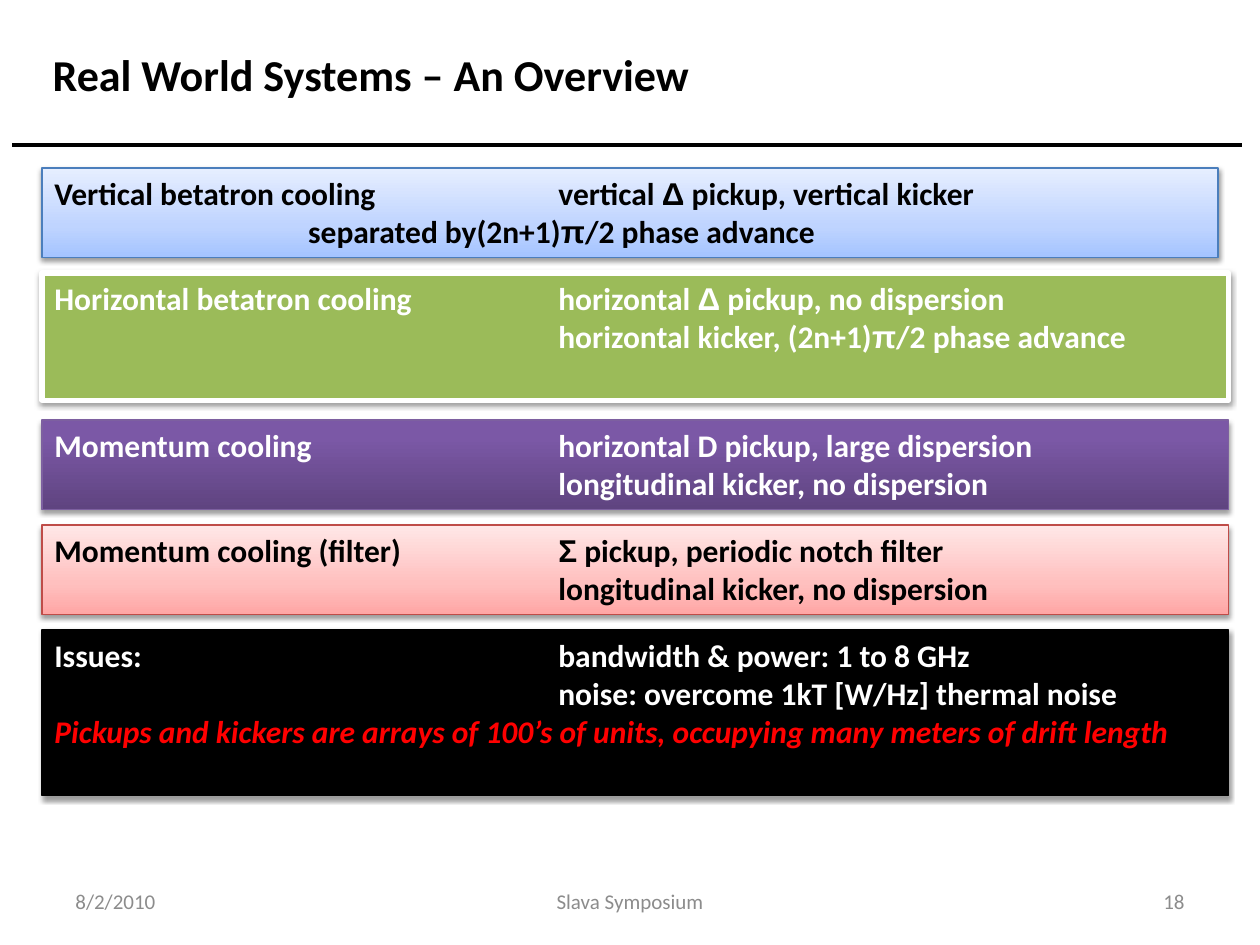
from itertools import groupby

from lxml import etree
from pptx import Presentation
from pptx.dml.color import RGBColor
from pptx.enum.shapes import MSO_CONNECTOR, MSO_SHAPE
from pptx.enum.text import MSO_ANCHOR, PP_ALIGN
from pptx.oxml.ns import qn
from pptx.util import Pt

RECT, STRAIGHT = MSO_SHAPE.RECTANGLE, MSO_CONNECTOR.STRAIGHT
TOP, MIDDLE = MSO_ANCHOR.TOP, MSO_ANCHOR.MIDDLE
LEFT, CENTER, RIGHT = PP_ALIGN.LEFT, PP_ALIGN.CENTER, PP_ALIGN.RIGHT
COLUMN = 288  # offset of the description column
SYMBOLS = "ΔπΣ"


def rgb(value):
    return RGBColor.from_string(value)


def add_text(p, text, size, color, **font):
    """Add text in Calibri, with the Greek symbols in Arial."""
    for is_symbol, chars in groupby(text, lambda c: c in SYMBOLS):
        r = p.add_run()
        r.text = "".join(chars)
        r.font.name = "Arial" if is_symbol else "Calibri"
        r.font.size = Pt(size)
        r.font.color.rgb = rgb(color)
        for name, value in font.items():
            setattr(r.font, name, value)


prs = Presentation()
prs.slide_width, prs.slide_height = Pt(720), Pt(540)
slide = prs.slides.add_slide(prs.slide_layouts[6])

# Title, date, footer and slide number
labels = [
    ("Real World Systems – An Overview", 23, 22, 674, 40, 25.2, "000000", LEFT, True),
    ("8/2/2010", 36, 500.5, 168, 28.75, 12, "8C8C8C", LEFT, False),
    ("18", 516, 500.5, 168, 28.75, 12, "8C8C8C", RIGHT, False),
    ("Slava Symposium", 246, 500.5, 228, 28.75, 12, "8C8C8C", CENTER, False),
]
for text, x, y, w, h, size, color, align, bold in labels:
    tf = slide.shapes.add_textbox(Pt(x), Pt(y), Pt(w), Pt(h)).text_frame
    tf.word_wrap, tf.vertical_anchor = True, MIDDLE
    p = tf.paragraphs[0]
    p.alignment = align
    add_text(p, text, size, color, bold=bold)

rule = slide.shapes.add_connector(STRAIGHT, Pt(7), Pt(83), Pt(710), Pt(83))
rule.line.color.rgb = rgb("000000")
rule.line.width = Pt(2)
etree.SubElement(rule._element.spPr, qn("a:effectLst"))

# Each line of a panel: (left indent, text, own font settings)
panels = [
    dict(top=96, width=672, height=51, line="4B7EBC", color="000000",
         fill=[(0, "A4C4FF"), (35, "BFD4FF"), (100, "E6EEFF")],
         lines=[(0, "Vertical betatron cooling\tvertical Δ pickup, vertical kicker", {}),
                (145, "separated by(2n+1)π/2 phase advance", {})]),
    dict(top=156, width=678, height=72.7, line="FFFFFF", color="FFFFFF",
         fill="9BBB59", line_width=3,
         lines=[(0, "Horizontal betatron cooling\thorizontal Δ pickup, no dispersion", {}),
                (COLUMN, "horizontal kicker, (2n+1)π/2 phase advance", {})]),
    dict(top=240, width=678, height=51, line="7D60A0", color="FFFFFF",
         fill=[(0, "5F4480"), (80, "7B58A6"), (100, "7C57A8")],
         lines=[(0, "Momentum cooling\thorizontal D pickup, large dispersion", {}),
                (COLUMN, "longitudinal kicker, no dispersion", {})]),
    dict(top=300, width=678, height=51, line="BF4C48", color="000000",
         fill=[(0, "FFA6A5"), (35, "FFC0BF"), (100, "FFE7E7")],
         lines=[(0, "Momentum cooling (filter)\tΣ pickup, periodic notch filter", {}),
                (COLUMN, "longitudinal kicker, no dispersion", {})]),
    dict(top=360, width=678, height=94.5, line="000000", color="FFFFFF",
         fill="000000",
         lines=[(0, "Issues:\tbandwidth & power: 1 to 8 GHz", {}),
                (COLUMN, "noise: overcome 1kT [W/Hz] thermal noise", {}),
                (0, "Pickups and kickers are arrays of 100’s of units, "
                    "occupying many meters of drift length",
                 dict(color="FF0000", italic=True))]),
]
for panel in panels:
    s = slide.shapes.add_shape(RECT, Pt(24), Pt(panel["top"]),
                               Pt(panel["width"]), Pt(panel["height"]))
    s.line.color.rgb = rgb(panel["line"])
    s.line.width = Pt(panel.get("line_width", 0.75))
    if isinstance(panel["fill"], str):
        s.fill.solid()
        s.fill.fore_color.rgb = rgb(panel["fill"])
    else:
        s.fill.gradient()
        s.fill.gradient_angle = 90
        stops = s._element.spPr.find(".//" + qn("a:gsLst"))
        for stop in list(stops):
            stops.remove(stop)
        for position, color in panel["fill"]:
            stop = etree.SubElement(stops, qn("a:gs"), pos=str(position * 1000))
            etree.SubElement(stop, qn("a:srgbClr"), val=color)

    s.shadow.inherit = False
    effects = s._element.spPr.find(qn("a:effectLst"))
    shadow = etree.SubElement(effects, qn("a:outerShdw"), blurRad=str(Pt(3.1)),
                              dist=str(Pt(1.6)), dir="5400000", rotWithShape="0")
    shade = etree.SubElement(shadow, qn("a:srgbClr"), val="000000")
    etree.SubElement(shade, qn("a:alpha"), val="38000")

    tf = s.text_frame
    tf.word_wrap, tf.vertical_anchor = True, TOP
    for i, (indent, text, font) in enumerate(panel["lines"]):
        p = tf.add_paragraph() if i else tf.paragraphs[0]
        p.alignment = LEFT
        pPr = p._p.get_or_add_pPr()
        pPr.set("marL", str(Pt(indent)))
        if "\t" in text:
            tabs = etree.SubElement(pPr, qn("a:tabLst"))
            etree.SubElement(tabs, qn("a:tab"), pos=str(Pt(COLUMN)), algn="l")
        add_text(p, text, **{"size": 18, "color": panel["color"], "bold": True, **font})

prs.save("out.pptx")
